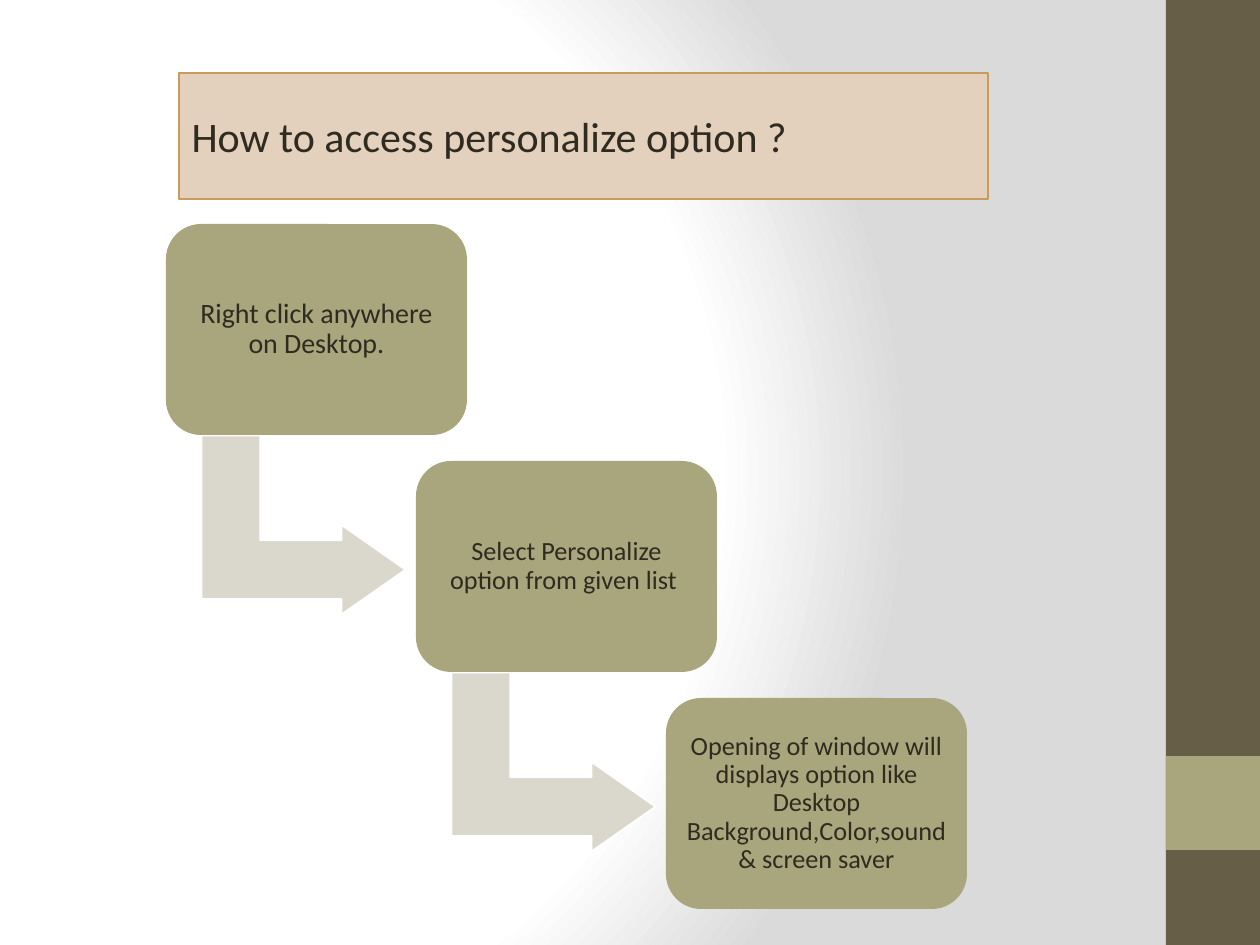
from pptx import Presentation
from pptx.dml.color import RGBColor
from pptx.enum.shapes import MSO_SHAPE
from pptx.enum.text import MSO_ANCHOR, MSO_AUTO_SIZE, PP_ALIGN
from pptx.oxml import parse_xml
from pptx.oxml.ns import nsdecls
from pptx.util import Pt

EMU_PER_PX = 914400 / 126
RECTANGLE = MSO_SHAPE.RECTANGLE
ROUNDED = MSO_SHAPE.ROUNDED_RECTANGLE
BENT_ARROW = MSO_SHAPE.BENT_UP_ARROW
MIDDLE = MSO_ANCHOR.MIDDLE
NO_AUTOFIT = MSO_AUTO_SIZE.NONE
LEFT, CENTER = PP_ALIGN.LEFT, PP_ALIGN.CENTER

WHITE = RGBColor(0xFF, 0xFF, 0xFF)
GRAY = RGBColor(0xDA, 0xDA, 0xDA)
BROWN = RGBColor(0x67, 0x5E, 0x47)
OLIVE = RGBColor(0xA9, 0xA5, 0x7C)
PALE_OLIVE = RGBColor(0xDA, 0xD8, 0xCC)
SAND = RGBColor(0xE3, 0xD1, 0xBD)
GOLD = RGBColor(0xC6, 0x9C, 0x58)
INK = RGBColor(0x2F, 0x2B, 0x20)

STEPS = [
    ("Right click anywhere on Desktop.", 16, 9),
    ("Select Personalize option from given list ", 15, 8),
    ("Opening of window will displays option like Desktop "
     "Background,Color,sound & screen saver", 15, 8),
]
STEP_LEFT, STEP_TOP, STEP_WIDTH, STEP_HEIGHT = 166, 224, 301, 211
STEP_RIGHT_BY, STEP_DOWN_BY = 250, 237


def px(length):
    """Turn pixels into EMU."""
    return round(length * EMU_PER_PX)


class SlideBuilder:
    """Hold the style and the current slide."""

    font = "Calibri"
    ink = INK

    def __init__(self, slide):
        self.slide = slide

    def background(self, stops):
        """Fill the background with a circular gradient."""
        marks = "".join(
            f'<a:gs pos="{percent * 1000}"><a:srgbClr val="{color}"/></a:gs>'
            for percent, color in stops)
        fill = parse_xml(
            f'<p:bg {nsdecls("p", "a")}><p:bgPr><a:gradFill rotWithShape="1">'
            f'<a:gsLst>{marks}</a:gsLst><a:path path="circle"><a:fillToRect '
            'l="20000" t="50000" r="100000" b="50000"/></a:path></a:gradFill>'
            '<a:effectLst/></p:bgPr></p:bg>')
        self.slide.element.cSld.insert(0, fill)

    def place(self, shape, left, top, width, height):
        """Set the position and size of a shape."""
        shape.left, shape.top = px(left), px(top)
        shape.width, shape.height = px(width), px(height)

    def paint(self, shape, fill, line=None):
        """Set the fill and outline of a shape."""
        shape.fill.solid()
        shape.fill.fore_color.rgb = fill
        if line is None:
            shape.line.fill.background()
        else:
            shape.line.color.rgb = line
            shape.line.width = Pt(1)

    def label(self, shape, text, size, align, spacing=1.0):
        """Put one paragraph into a shape."""
        frame = shape.text_frame
        frame.text = text
        frame.word_wrap = True
        frame.auto_size = NO_AUTOFIT
        frame.vertical_anchor = MIDDLE
        para = frame.paragraphs[0]
        para.alignment = align
        para.line_spacing = spacing
        para.font.name = self.font
        para.font.size = Pt(size)
        para.font.color.rgb = self.ink

    def title(self, text, *bounds):
        """Format the title placeholder as a rounded panel."""
        title = self.slide.shapes.title
        self.place(title, *bounds)
        title.element.spPr.append(parse_xml(
            f'<a:prstGeom {nsdecls("a")} prst="flowChartAlternateProcess">'
            '<a:avLst/></a:prstGeom>'))
        self.paint(title, SAND, GOLD)
        self.label(title, text, 24, LEFT)

    def shape(self, kind, fill, *bounds, line=None):
        """Add a filled preset shape."""
        shape = self.slide.shapes.add_shape(kind, *map(px, bounds))
        shape.shadow.inherit = False
        self.paint(shape, fill, line)
        return shape

    def arrow(self, *bounds):
        """Add a bent arrow that goes down and then right."""
        arrow = self.shape(BENT_ARROW, PALE_OLIVE, *bounds, line=WHITE)
        arrow.rotation = 90
        for index, value in enumerate((0.328, 0.25, 0.358)):
            arrow.adjustments[index] = value

    def step(self, text, size, inset, *bounds):
        """Add a rounded step box with centred text."""
        box = self.shape(ROUNDED, OLIVE, *bounds)
        self.label(box, text, size, CENTER, 0.9)
        frame = box.text_frame
        frame.margin_left = frame.margin_right = px(inset)
        frame.margin_top = frame.margin_bottom = px(inset)


def main():
    """Build the slide and save it."""
    deck = Presentation()
    deck.slide_width, deck.slide_height = px(1260), px(945)
    page = SlideBuilder(deck.slides.add_slide(deck.slide_layouts[5]))
    page.background([(0, WHITE), (75, WHITE), (100, GRAY)])
    page.shape(RECTANGLE, BROWN, 1166, 0, 94, 945)
    page.shape(RECTANGLE, OLIVE, 1166, 756, 94, 94)
    for index, (text, size, inset) in enumerate(STEPS):
        left = STEP_LEFT + index * STEP_RIGHT_BY
        top = STEP_TOP + index * STEP_DOWN_BY
        if index < len(STEPS) - 1:
            page.arrow(left + 48, top + 199, 179, 204)
        page.step(text, size, inset, left, top, STEP_WIDTH, STEP_HEIGHT)
    page.title("How to access personalize option ?", 179, 73, 809, 126)
    deck.save("out.pptx")


if __name__ == "__main__":
    main()
